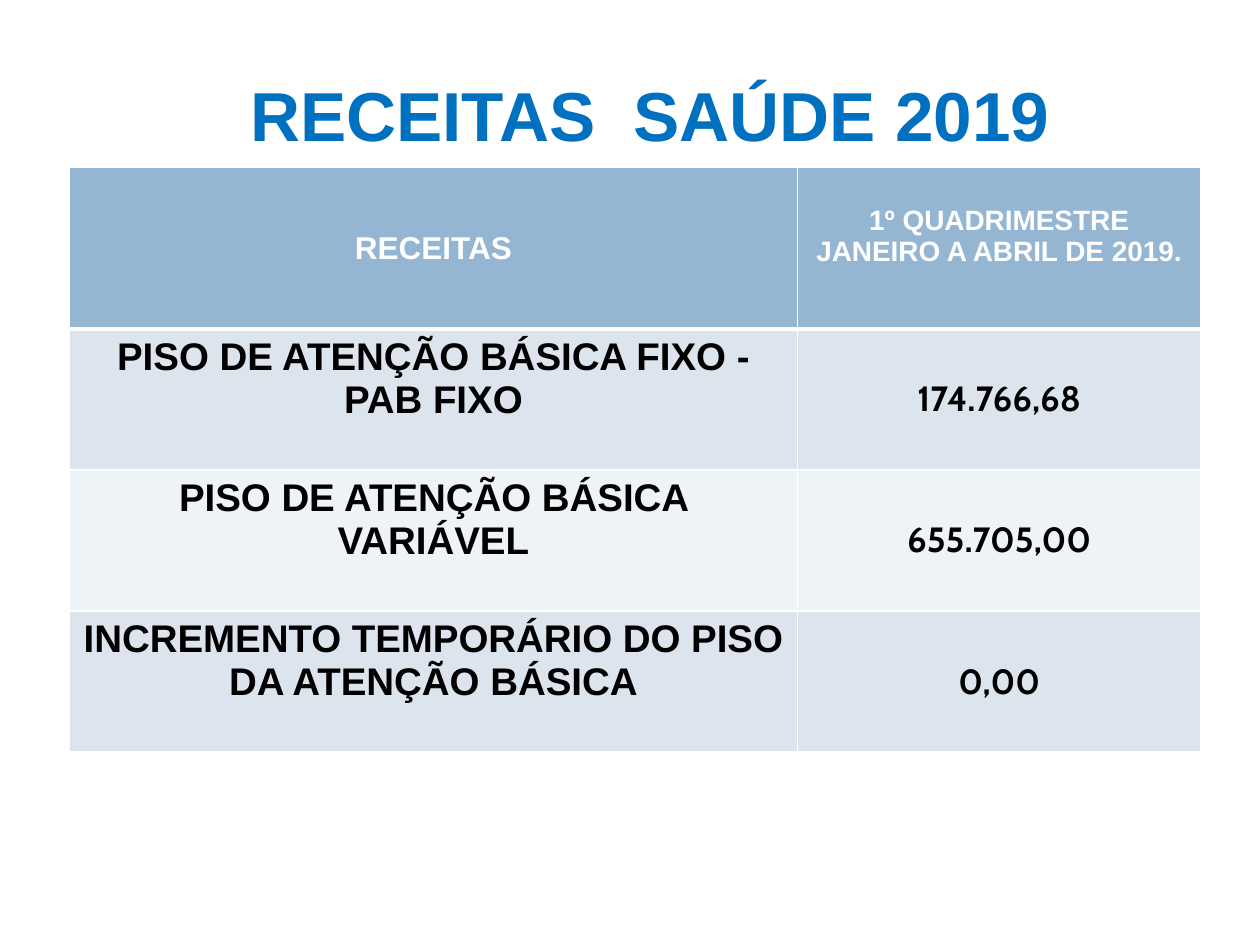
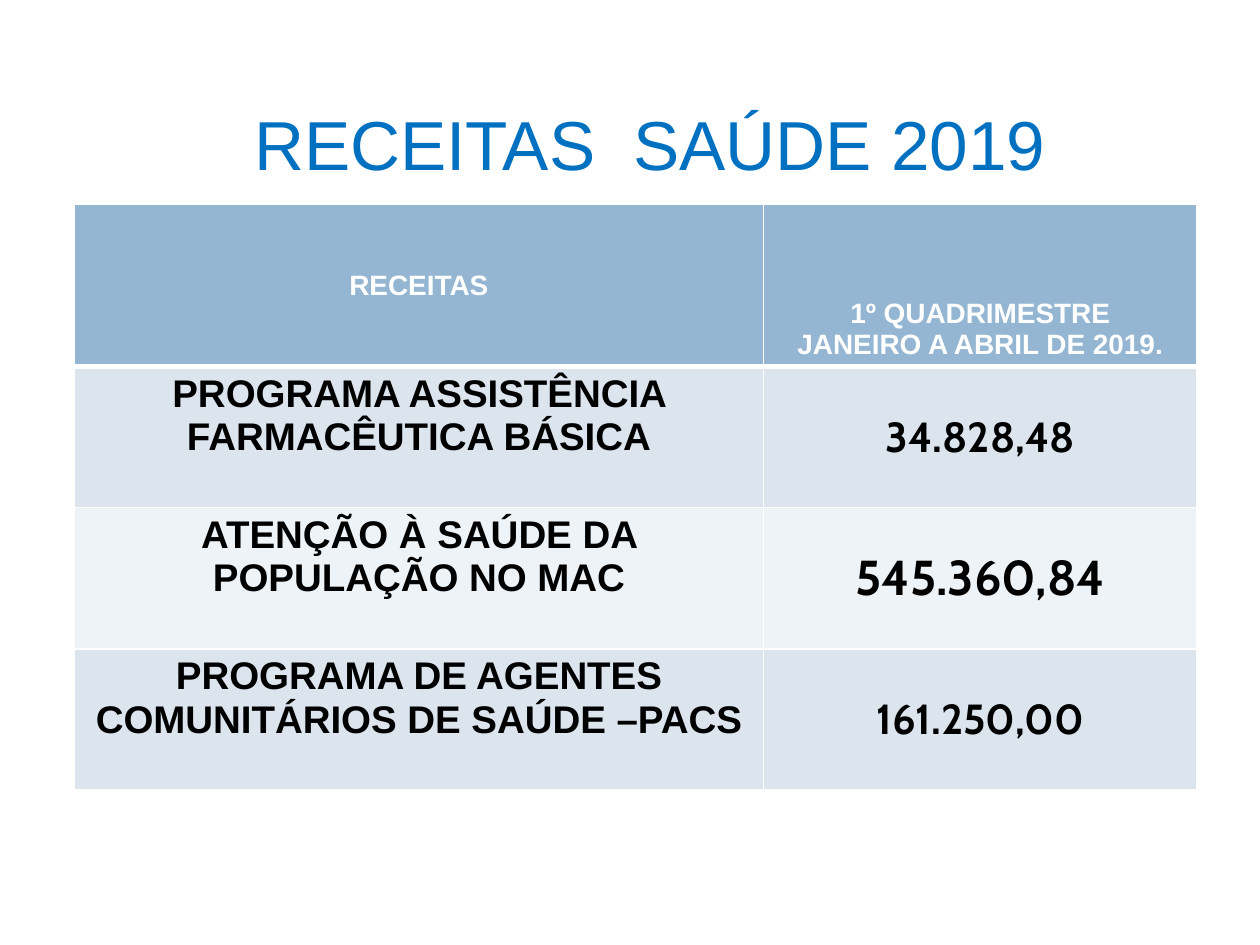
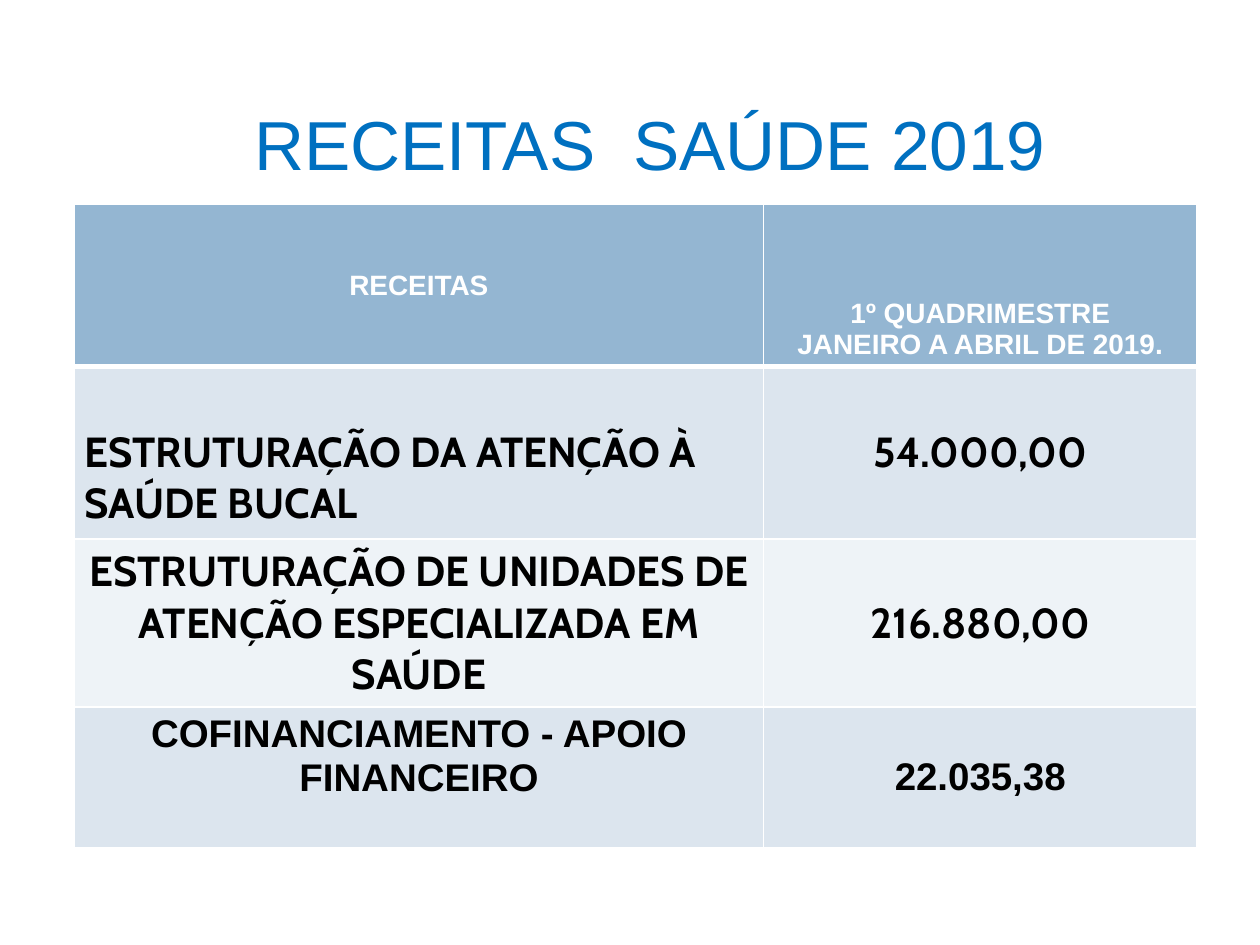
from lxml.etree import SubElement
from pptx import Presentation
from pptx.dml.color import RGBColor
from pptx.enum.text import MSO_ANCHOR as Anchor, MSO_AUTO_SIZE as AutoSize, PP_ALIGN as Align
from pptx.oxml.ns import qn
from pptx.util import Inches, Pt

COLORS = {
    "title": "0070C0", "header": "94B6D2", "band_dark": "DCE5EE",
    "band_light": "EEF3F7", "border": "FFFFFF", "header_text": "FFFFFF",
    "body_text": "000000",
}
FONTS = {
    "title_bold": {"name": "Arial", "size": Pt(39.6), "bold": True},
    "title": {"name": "Arial", "size": Pt(39.6), "bold": False},
    "header_large": {"name": "Arial", "size": Pt(18), "bold": True},
    "header": {"name": "Arial", "size": Pt(16), "bold": True},
    "arial": {"name": "Arial", "size": Pt(22), "bold": True},
    "cabin_20": {"name": "Cabin", "size": Pt(20), "bold": True},
    "cabin_24": {"name": "Cabin", "size": Pt(24), "bold": True},
    "cabin_28": {"name": "Cabin", "size": Pt(28), "bold": True},
}
TITLE = "RECEITAS  SAÚDE 2019"
PERIOD = ["1º QUADRIMESTRE", "JANEIRO A ABRIL DE 2019."]

# Cell: (lines, font, cell format)
MIDDLE = {"vertical_anchor": Anchor.MIDDLE}
TOP = {"vertical_anchor": Anchor.TOP}
BOTTOM = {"vertical_anchor": Anchor.BOTTOM}
LOWERED = {"vertical_anchor": Anchor.TOP, "margin_top": Inches(0.3)}
PADDED = {"vertical_anchor": Anchor.BOTTOM, "margin_left": Inches(0.08),
          "margin_right": Inches(0.08), "margin_bottom": Inches(0.08)}


def label(text, font="arial", cell_format=TOP):
    return [text], font, cell_format


def value(text, font="cabin_24"):
    return [text], font, MIDDLE


class RevenueDeck:
    def __init__(self):
        self.deck = Presentation()
        self.deck.slide_width = Inches(10)
        self.deck.slide_height = Inches(7.5)
        self.page = None

    def add_page(self):
        self.page = self.deck.slides.add_slide(self.deck.slide_layouts[5])

    def apply(self, target, values):
        for name, setting in values.items():
            setattr(target, name, setting)

    def fill_text(self, frame, lines, font, color, align=Align.CENTER):
        for index, line in enumerate(lines):
            para = frame.paragraphs[0] if index == 0 else frame.add_paragraph()
            para.alignment = align
            span = para.add_run()
            span.text = line
            self.apply(span.font, FONTS[font])
            span.font.color.rgb = RGBColor.from_string(COLORS[color])

    def title(self, top, font):
        box = self.page.shapes.title
        self.apply(box, {"left": Inches(0.62), "top": Inches(top),
                         "width": Inches(9.08), "height": Inches(0.71)})
        self.apply(box.text_frame, {"word_wrap": True, "auto_size": AutoSize.NONE,
                                    "vertical_anchor": Anchor.MIDDLE})
        self.fill_text(box.text_frame, [TITLE], font, "title")

    def borders(self, cell, row):
        """White lines, heavier between the header and the first body row."""
        heavy = {(0, "B"), (1, "T")}
        properties = cell._tc.get_or_add_tcPr()
        for side in "LRTB":
            width = Pt(3 if (row, side) in heavy else 1)
            line = SubElement(properties, qn(f"a:ln{side}"), w=str(width))
            fill = SubElement(line, qn("a:solidFill"))
            SubElement(fill, qn("a:srgbClr"), val=COLORS["border"])

    def table(self, left, top, widths, heights, rows):
        box = self.page.shapes.add_table(
            len(rows), len(widths), Inches(left), Inches(top),
            Inches(sum(widths)), Inches(sum(heights)))
        grid = box.table
        for column, width in zip(grid.columns, widths):
            column.width = Inches(width)
        for row, (height, cells) in enumerate(zip(heights, rows)):
            grid.rows[row].height = Inches(height)
            band = "header" if row == 0 else ("band_light", "band_dark")[row % 2]
            ink = "header_text" if row == 0 else "body_text"
            for column, (lines, font, cell_format) in enumerate(cells):
                cell = grid.cell(row, column)
                self.borders(cell, row)
                cell.fill.solid()
                cell.fill.fore_color.rgb = RGBColor.from_string(COLORS[band])
                self.apply(cell, cell_format)
                align = Align.LEFT if cell_format is PADDED else Align.CENTER
                self.fill_text(cell.text_frame, lines, font, ink, align)


def main():
    first = {
        "title": (0.55, "title_bold"),
        "table": (0.55, 1.33, [5.78, 3.2], [1.28, 1.12, 1.12, 1.12]),
        "header": [(["RECEITAS"], "header_large", MIDDLE), (PERIOD, "header", LOWERED)],
        "rows": [
            [label("PISO DE ATENÇÃO BÁSICA FIXO - PAB FIXO"),
             value("174.766,68", "cabin_20")],
            [label("PISO DE ATENÇÃO BÁSICA VARIÁVEL"), value("655.705,00", "cabin_20")],
            [label("INCREMENTO TEMPORÁRIO DO PISO DA ATENÇÃO BÁSICA"),
             value("0,00", "cabin_20")],
        ],
    }
    later_title = (0.78, "title")
    later_place = (0.59, 1.62, [5.47, 3.44])
    later_header = [(["RECEITAS"], "header", MIDDLE), (PERIOD, "header", BOTTOM)]
    second = {
        "title": later_title,
        "table": (*later_place, [1.29, 1.12, 1.12, 1.12]),
        "header": later_header,
        "rows": [
            [label("PROGRAMA ASSISTÊNCIA FARMACÊUTICA BÁSICA"), value("34.828,48")],
            [label("ATENÇÃO À SAÚDE DA POPULAÇÃO NO MAC"),
             value("545.360,84", "cabin_28")],
            [label("PROGRAMA DE AGENTES COMUNITÁRIOS DE SAÚDE –PACS"),
             value("161.250,00")],
        ],
    }
    third = {
        "title": later_title,
        "table": (*later_place, [1.29, 1.37, 1.33, 1.12]),
        "header": later_header,
        "rows": [
            [label("ESTRUTURAÇÃO DA ATENÇÃO À SAÚDE BUCAL", "cabin_24", PADDED),
             value("54.000,00")],
            [label("ESTRUTURAÇÃO DE UNIDADES DE ATENÇÃO ESPECIALIZADA EM SAÚDE",
                   "cabin_24", MIDDLE), value("216.880,00")],
            [label("COFINANCIAMENTO - APOIO FINANCEIRO"), value("22.035,38", "arial")],
        ],
    }
    revenue = RevenueDeck()
    for content in (first, second, third):
        revenue.add_page()
        revenue.title(*content["title"])
        revenue.table(*content["table"], [content["header"], *content["rows"]])
    revenue.deck.save("out.pptx")


if __name__ == "__main__":
    main()
